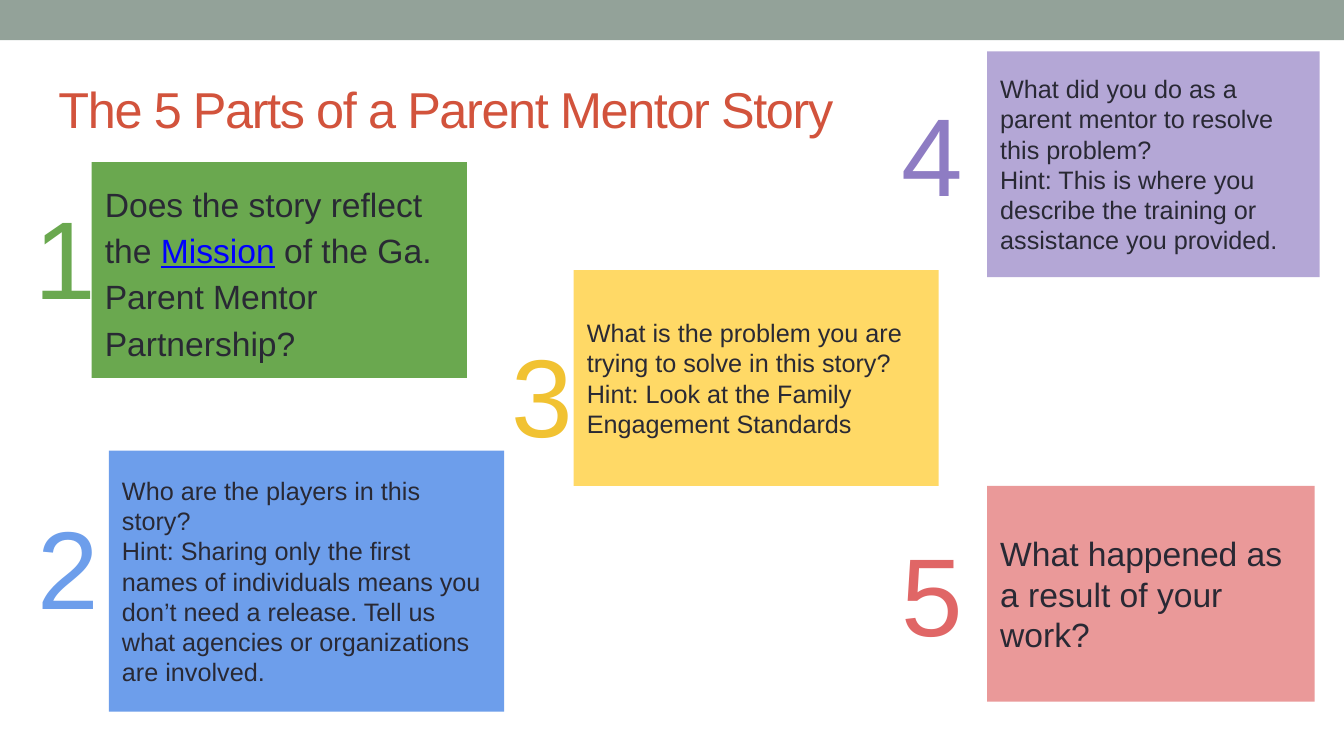
from dataclasses import dataclass
from pptx import Presentation
from pptx.dml.color import RGBColor
from pptx.enum.shapes import MSO_SHAPE
from pptx.enum.text import MSO_ANCHOR, MSO_AUTO_SIZE
from pptx.util import Inches, Pt


@dataclass(frozen=True)
class Theme:
    face: str = "Arial"
    band: str = "93A299"
    title: str = "D2533C"
    ink: str = "292934"
    link: str = "0000FF"
    head: int = 36
    large: int = 24
    small: int = 18
    digit: int = 79
    inset: float = 0.13


THEME = Theme()
WIDE, HIGH = 13.33, 7.5

CARDS = [
    ("1", (0.91, 1.61, 3.72, 2.14), (0.21, 1.74, 0.67), "6AA84F", "6AA84F", THEME.large,
     [["Does the story reflect the ", "Mission", " of the Ga. Parent Mentor Partnership?"]],
     {"line_spacing": 1.15, "space_after": Pt(16)}),
    ("2", (1.08, 4.47, 3.92, 2.59), (0.24, 4.82, 0.67), "6D9EEB", "6D9EEB", THEME.small,
     [["Who are the players in this story?"],
      ["Hint: Sharing only the first names of individuals means you don’t need a release. "
       "Tell us what agencies or organizations are involved."]], {}),
    ("3", (5.69, 2.68, 3.62, 2.14), (4.94, 3.11, 0.75), "FFD966", "F1C232", THEME.small,
     [["What is the problem you are trying to solve in this story?"],
      ["Hint: Look at the Family Engagement Standards"]], {}),
    ("4", (9.79, 0.51, 3.3, 2.24), (8.81, 0.72, 0.86), "B4A7D6", "8E7CC3", THEME.small,
     [["What did you do as a parent mentor to resolve this problem?"],
      ["Hint: This is where you describe the training or assistance you provided."]], {}),
    ("5", (9.79, 4.82, 3.25, 2.14), (8.81, 5.09, 0.86), "EA9999", "E06666", THEME.large,
     [["What happened as a result of your work?"]], {}),
]


def apply(item, values):
    for name, value in values.items():
        setattr(item, name, value)


def block(slide, box, fill):
    shape = slide.shapes.add_shape(MSO_SHAPE.RECTANGLE, *map(Inches, box))
    shape.shadow.inherit = False
    shape.fill.solid()
    shape.fill.fore_color.rgb = RGBColor.from_string(fill)
    shape.line.fill.background()
    return shape


def write(frame, paras, size, color, form, anchor=MSO_ANCHOR.TOP):
    sides = ("left", "right", "top", "bottom")
    apply(frame, {f"margin_{side}": Inches(THEME.inset) for side in sides})
    apply(frame, {"word_wrap": True, "vertical_anchor": anchor})
    for index, texts in enumerate(paras):
        para = frame.add_paragraph() if index else frame.paragraphs[0]
        apply(para, {"alignment": 1, **form})
        for text in texts:
            run = para.add_run()
            run.text = text
            linked = text == "Mission"
            apply(run.font, {"name": THEME.face, "size": Pt(size), "underline": linked})
            run.font.color.rgb = RGBColor.from_string(THEME.link if linked else color)


def header(slide, box):
    left, top, width, height = box
    block(slide, (left, top, width, 0.4), THEME.band)
    label = slide.shapes.add_textbox(*map(Inches, (left + 0.45, top + 0.65, 12.42, height - 0.65)))
    write(label.text_frame, [["The 5 Parts of a Parent Mentor Story"]], THEME.head, THEME.title, {})
    label.text_frame.paragraphs[0].runs[0].font._element.set("spc", "-100")


def card(slide, box, fill, paras, size, form):
    shape = block(slide, box, fill)
    write(shape.text_frame, paras, size, THEME.ink, form, MSO_ANCHOR.MIDDLE)


def number(slide, spot, digit, color):
    label = slide.shapes.add_textbox(*map(Inches, (*spot, 1.59)))
    write(label.text_frame, [[digit]], THEME.digit, color, {})
    label.text_frame.auto_size = MSO_AUTO_SIZE.SHAPE_TO_FIT_TEXT


def main():
    deck = Presentation()
    apply(deck, {"slide_width": Inches(WIDE), "slide_height": Inches(HIGH)})
    slide = deck.slides.add_slide(deck.slide_layouts[6])
    header(slide, (0, 0, WIDE, 1.49))
    for digit, box, spot, fill, color, size, paras, form in CARDS:
        card(slide, box, fill, paras, size, form)
        number(slide, spot, digit, color)
    deck.save("out.pptx")


if __name__ == "__main__":
    main()
